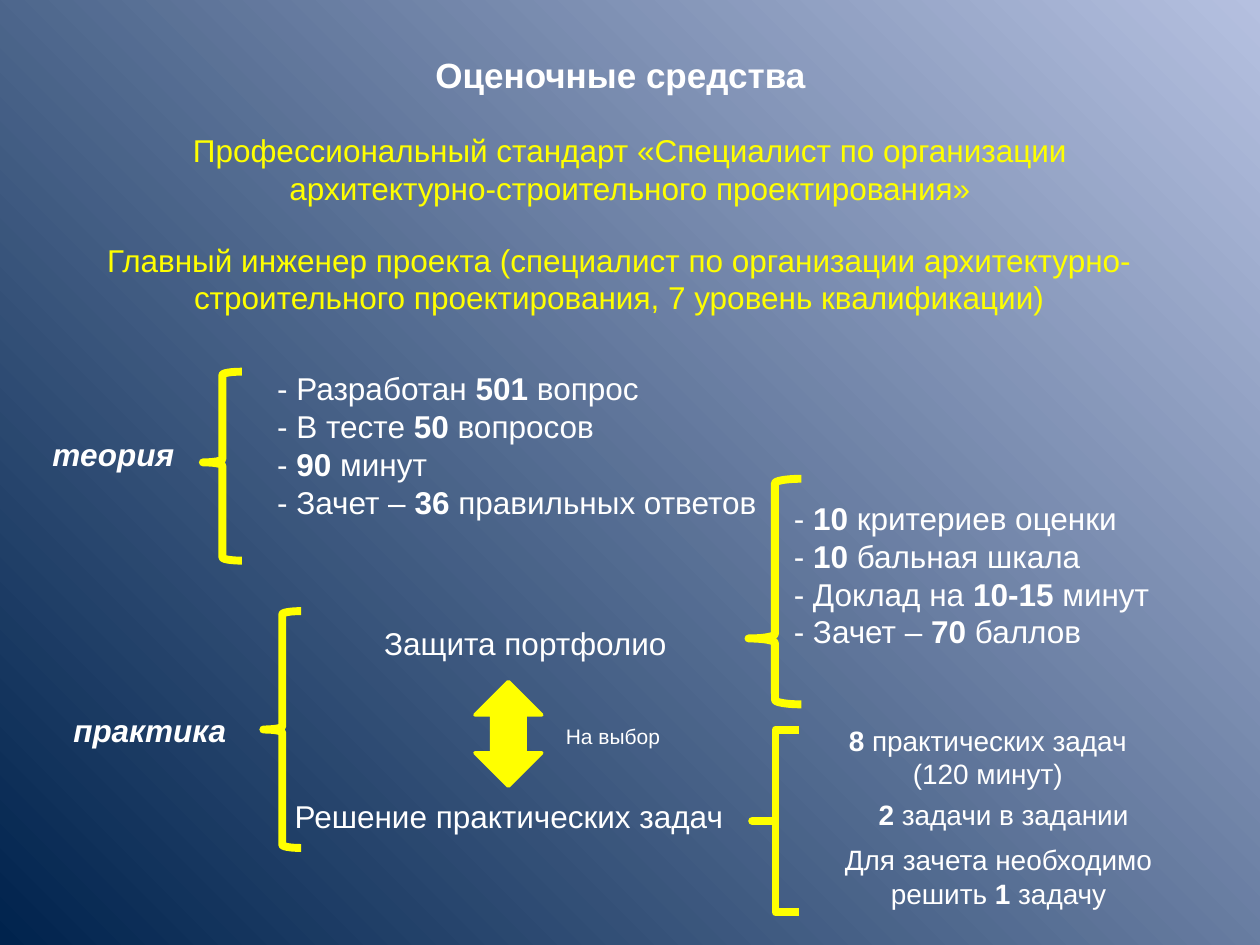
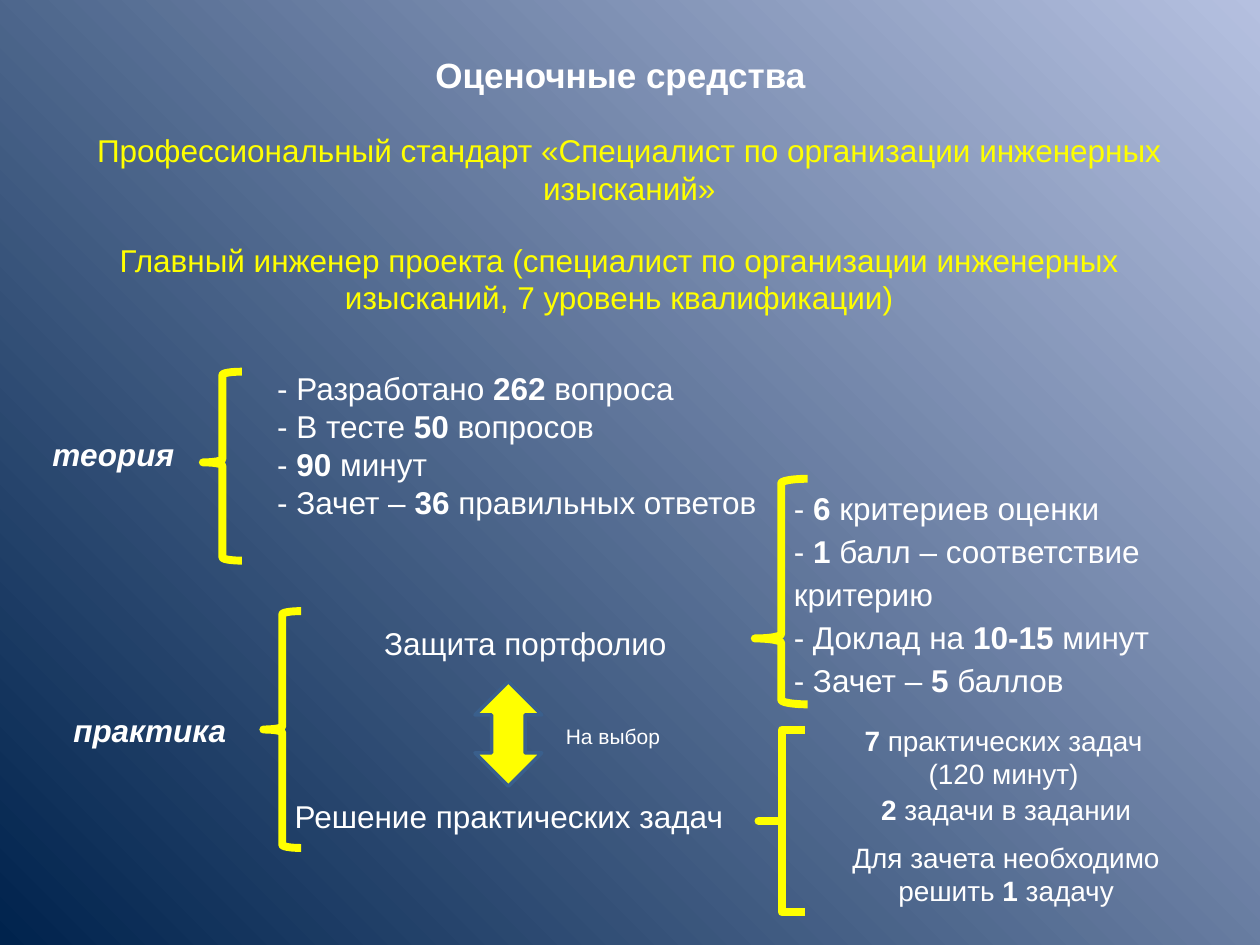
from dataclasses import dataclass

from lxml import etree
from pptx import Presentation
from pptx import util as u
from pptx.dml.color import RGBColor
from pptx.enum import shapes, text
from pptx.oxml import parse_xml
from pptx.oxml.ns import nsdecls, qn


@dataclass(frozen=True)
class Theme:
    font: str = "Arial"
    white: str = "FFFFFF"
    yellow: str = "FFFF00"
    blue_edge: str = "3A5F8C"
    sky: tuple = ((0, "BFC9E5"), (0, "B5C0E0"), (100, "00234D"))
    heading: int = 20
    main: int = 18
    detail: int = 16
    remark: int = 12
    brace_line: float = 4.5
    arrow_line: float = 2


THEME = Theme()
COLUMNS, ROWS = 100, 75
TWO_CONTENT = 3


class Board:
    """Draws on the current slide; boxes are (column, row, columns, rows)."""

    def __init__(self, theme):
        self.theme = theme
        self.deck = Presentation()
        self.deck.slide_width, self.deck.slide_height = u.Inches(10), u.Inches(7.5)
        self.slide = None
        self.paint_master()

    def paint_master(self):
        """Give every slide the corner-to-corner gradient."""
        master = self.deck.slide_master
        master.background.fill.solid()
        stops = "".join(
            f'<a:gs pos="{share * 1000}"><a:srgbClr val="{color}"/></a:gs>'
            for share, color in self.theme.sky)
        gradient = parse_xml(
            f'<a:gradFill {nsdecls("a")} rotWithShape="1"><a:gsLst>{stops}</a:gsLst>'
            '<a:path path="circle"><a:fillToRect l="100000" b="100000"/></a:path>'
            '</a:gradFill>')
        background = master.element.find(".//" + qn("p:bgPr"))
        background.replace(background.find(qn("a:solidFill")), gradient)

    def add_slide(self):
        self.slide = self.deck.slides.add_slide(self.deck.slide_layouts[TWO_CONTENT])

    def cells(self, box):
        width, height = self.deck.slide_width, self.deck.slide_height
        return [int(size * count / parts) for count, size, parts in
                zip(box, (width, height) * 2, (COLUMNS, ROWS) * 2)]

    def set_lines(self, frame, lines, size, color, align, italic=False, spacing=1.0):
        """Fill a frame with lines; words between asterisks become bold."""
        frame.word_wrap = True
        for index, line in enumerate(lines):
            paragraph = frame.paragraphs[0] if index == 0 else frame.add_paragraph()
            paragraph.alignment = align
            paragraph.line_spacing = spacing
            paragraph.space_before = u.Pt(0)
            for part, words in enumerate(line.split("*")):
                if not words:
                    continue
                run = paragraph.add_run()
                run.text = words
                font = run.font
                font.name, font.size = self.theme.font, u.Pt(size)
                font.bold, font.italic = part % 2 == 1, italic
                font.color.rgb = RGBColor.from_string(color)

    def place(self, holder, box):
        holder.left, holder.top, holder.width, holder.height = self.cells(box)
        holder.text_frame.auto_size = text.MSO_AUTO_SIZE.NONE

    def title(self, box, words):
        heading = self.slide.shapes.title
        self.place(heading, box)
        heading.text_frame.vertical_anchor = text.MSO_ANCHOR.MIDDLE
        self.set_lines(heading.text_frame, [f"*{words}*"], self.theme.heading,
                       self.theme.white, text.PP_ALIGN.CENTER)

    def facts(self, index, box, lines, spacing=1.0):
        """Put a list into the body placeholder with this index."""
        body = self.slide.placeholders[index]
        self.place(body, box)
        body.text_frame.vertical_anchor = text.MSO_ANCHOR.TOP
        self.set_lines(body.text_frame, lines, self.theme.main, self.theme.white,
                       text.PP_ALIGN.LEFT, spacing=spacing)
        for paragraph in body.text_frame.paragraphs:
            layout = paragraph._p.get_or_add_pPr()
            layout.set("marL", "0")
            layout.set("indent", "0")
            etree.SubElement(layout, qn("a:buNone"))

    def label(self, box, words, size=None, color=None, italic=False):
        note = self.slide.shapes.add_textbox(*self.cells(box))
        self.set_lines(note.text_frame, [words], size or self.theme.main,
                       color or self.theme.white, text.PP_ALIGN.CENTER, italic)

    def outline(self, kind, box, color, width):
        figure = self.slide.shapes.add_shape(kind, *self.cells(box))
        figure.shadow.inherit = False
        figure.line.color.rgb = RGBColor.from_string(color)
        figure.line.width = u.Pt(width)
        return figure

    def brace(self, box, curl=0.083, tip=0.5):
        figure = self.outline(shapes.MSO_SHAPE.LEFT_BRACE, box,
                              self.theme.yellow, self.theme.brace_line)
        figure.fill.background()
        figure.adjustments[0], figure.adjustments[1] = curl, tip

    def choice_arrow(self, box, edge):
        arrow = self.outline(shapes.MSO_SHAPE.UP_DOWN_ARROW, box, edge,
                             self.theme.arrow_line)
        arrow.fill.solid()
        arrow.fill.fore_color.rgb = RGBColor.from_string(self.theme.yellow)


@dataclass(frozen=True)
class Exam:
    """What differs between the two qualifications."""
    standard: str
    standard_box: tuple
    position: str
    question_pool: str
    portfolio: tuple
    portfolio_box: tuple
    portfolio_spacing: float
    tasks: str
    task_boxes: tuple
    brace_shift: float
    arrow_edge: str


EXAMS = (
    Exam(
        standard="Профессиональный стандарт «Специалист по организации "
                 "архитектурно-строительного проектирования»",
        standard_box=(5.9, 9.9, 88.2, 7.1),
        position="Главный инженер проекта (специалист по организации "
                 "архитектурно-строительного проектирования, 7 уровень квалификации)",
        question_pool="- Разработан *501* вопрос",
        portfolio=("- *10* критериев оценки", "- *10* бальная шкала",
                   "- Доклад на *10-15* минут", "- Зачет – *70* баллов"),
        portfolio_box=(62, 39.1, 36.2, 19.2),
        portfolio_spacing=1.0,
        tasks="*8* практических задач (120 минут)",
        task_boxes=((64.2, 56.9, 28.4, 6.4), (62.9, 62.8, 33.5, 3.7),
                    (62.5, 66.4, 33.5, 6.4)),
        brace_shift=0,
        arrow_edge=THEME.yellow),
    Exam(
        standard="Профессиональный стандарт «Специалист по организации "
                 "инженерных изысканий»",
        standard_box=(3.5, 9.9, 92.9, 7.1),
        position="Главный инженер проекта (специалист по организации "
                 "инженерных изысканий, 7 уровень квалификации)",
        question_pool="- Разработано *262* вопроса",
        portfolio=("- *6* критериев оценки", "- *1* балл – соответствие критерию",
                   "- Доклад на *10-15* минут", "- Зачет – *5* баллов"),
        portfolio_box=(62, 37.9, 36.2, 24.3),
        portfolio_spacing=1.14,
        tasks="*7* практических задач (120 минут)",
        task_boxes=((66.4, 56.9, 26.5, 6.4), (63.1, 62.4, 33.5, 3.7),
                    (63.1, 66.2, 33.5, 6.4)),
        brace_shift=0.5,
        arrow_edge=THEME.blue_edge),
)


def draw_exam(board, exam):
    theme = board.theme
    board.add_slide()
    board.title((13, 3.6, 72.5, 4.7), "Оценочные средства")
    board.label(exam.standard_box, exam.standard, color=theme.yellow)
    board.label((7, 18.6, 84.3, 7.2), exam.position, color=theme.yellow)

    board.label((-2.8, 34, 23.6, 4), "*теория*", italic=True)
    board.brace((16.1, 29.5, 3.1, 15), tip=0.48)
    board.facts(1, (21, 28.8, 43.2, 19.2), (
        exam.question_pool, "- В тесте *50* вопросов", "- *90* минут",
        "- Зачет – *36* правильных ответов"))

    board.label((0.1, 55.9, 23.6, 4), "*практика*", italic=True)
    board.brace((20.9, 48.5, 3, 18.8))
    board.label((21.2, 49, 41, 4), "Защита портфолио")
    board.choice_arrow((37.7, 54.1, 5.3, 8.3), exam.arrow_edge)
    board.label((41.2, 56.9, 14.9, 3), "На выбор", theme.remark)
    board.label((19.9, 62.8, 41, 4), "Решение практических задач")

    board.brace((59.4 + exam.brace_shift, 38, 4.2, 17.9), tip=0.708)
    board.facts(2, exam.portfolio_box, exam.portfolio, exam.portfolio_spacing)
    board.brace((59.7 + exam.brace_shift, 57.9, 3.7, 14.5), curl=0)
    task_notes = (exam.tasks, "*2* задачи в задании",
                  "Для зачета необходимо решить *1* задачу")
    for box, words in zip(exam.task_boxes, task_notes):
        board.label(box, words, theme.detail)


def main():
    board = Board(THEME)
    for exam in EXAMS:
        draw_exam(board, exam)
    board.deck.save("out.pptx")


if __name__ == "__main__":
    main()
